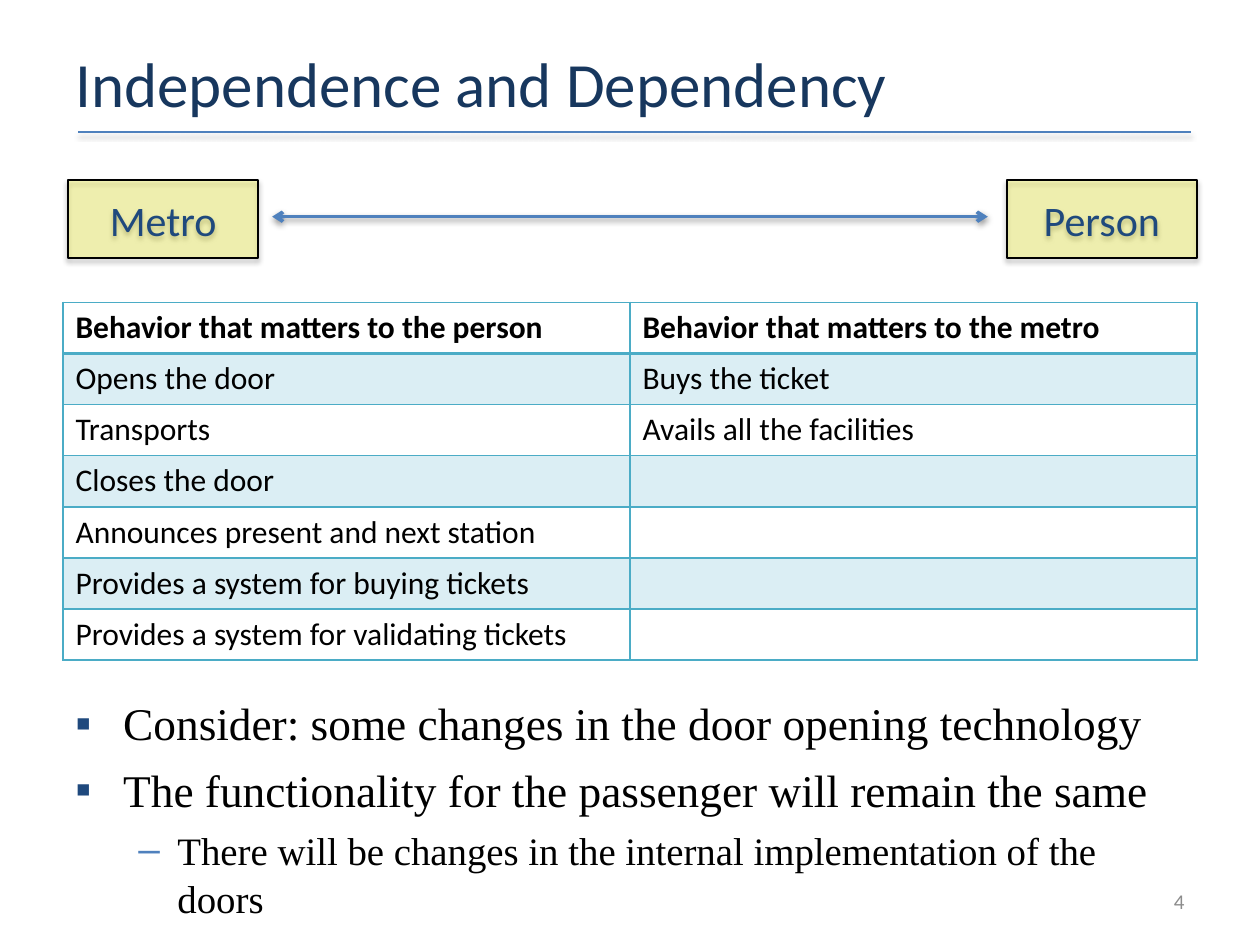
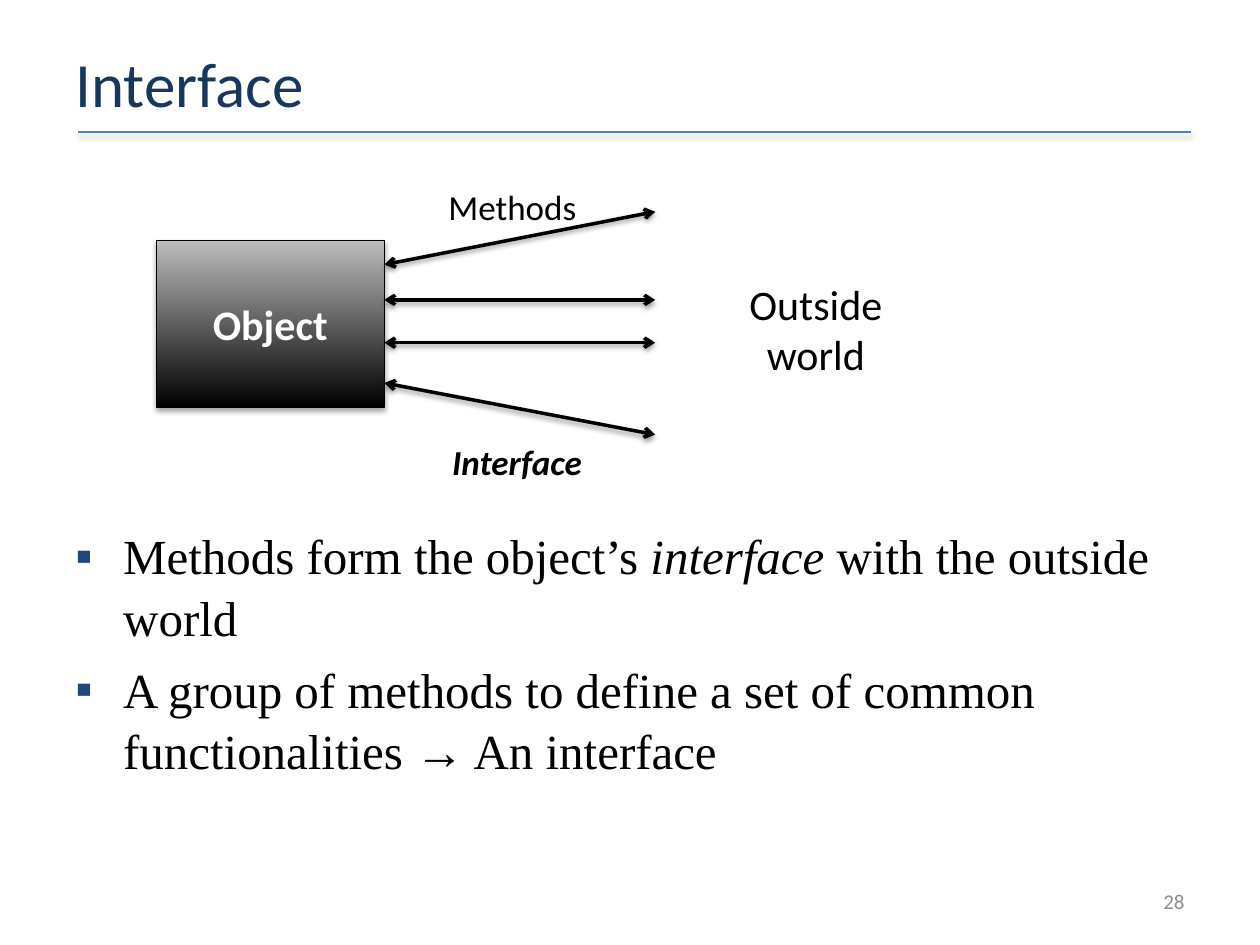
from collections import namedtuple
from dataclasses import dataclass

from lxml.etree import SubElement
from pptx import Presentation
from pptx.dml.color import RGBColor as RGB
from pptx.enum.shapes import MSO_CONNECTOR as Connector, MSO_SHAPE as Preset
from pptx.enum.text import MSO_ANCHOR as Anchor, PP_ALIGN as Align
from pptx.oxml.ns import qn
from pptx.util import Inches, Pt

Box = namedtuple("Box", "left top width height")


@dataclass(frozen=True)
class Theme:
    heading: str = "Calibri"
    serif: str = "Times New Roman"
    title: str = "17375E"
    navy: str = "1F497D"
    blue: str = "4F81BD"
    teal: str = "4BACC6"
    band: str = "DBEEF4"
    yellow: str = "FFFF00"
    silver: str = "BDBDBD"
    grey: str = "8C8C8C"
    black: str = "000000"
    white: str = "FFFFFF"
    title_size: float = 36
    body_size: float = 28
    box_size: float = 24
    label_size: float = 20
    table_size: float = 18
    footer_size: float = 12


THEME = Theme()
BEHAVIORS = [
    ("Behavior that matters to the person", "Behavior that matters to the metro"),
    ("Opens the door", "Buys the ticket"),
    ("Transports", "Avails all the facilities"),
    ("Closes the door", ""),
    ("Announces present and next station", ""),
    ("Provides a system for buying tickets", ""),
    ("Provides a system for validating tickets", ""),
]
# Bullet levels: mark, mark colour, left indent and hanging indent
LEVELS = [("▪", THEME.navy, 0.38, 0.38), ("–", THEME.blue, 0.81, 0.31)]


# Shared helpers
def add_xml(parent, tag, **attributes):
    return SubElement(parent, qn(tag), {k: str(v) for k, v in attributes.items()})


def add_color(parent, color, alpha=None):
    node = add_xml(add_xml(parent, "a:solidFill"), "a:srgbClr", val=color)
    if alpha is not None:
        add_xml(node, "a:alpha", val=alpha * 1000)


def add_shadow(shape, alpha, distance):
    effects = add_xml(shape.element.spPr, "a:effectLst")
    shadow = add_xml(effects, "a:outerShdw", blurRad=Pt(3.1), dist=Pt(distance),
                     dir=90 * 60000, rotWithShape=0)
    add_xml(add_xml(shadow, "a:srgbClr", val=THEME.black), "a:alpha", val=alpha * 1000)


def write(para, text, size, color=THEME.black, name=THEME.heading, **styles):
    span = para.add_run()
    span.text = text
    values = {"size": Pt(size), "name": name, **styles}
    for key, value in values.items():
        setattr(span.font, key, value)
    span.font.color.rgb = RGB.from_string(color)


def inches(box):
    return [Inches(value) for value in box]


def add_text(page, box, text, size, color=THEME.black, align=Align.LEFT,
             anchor=Anchor.TOP, **styles):
    frame = page.shapes.add_textbox(*inches(box)).text_frame
    frame.word_wrap = True
    frame.vertical_anchor = anchor
    frame.paragraphs[0].alignment = align
    write(frame.paragraphs[0], text, size, color, **styles)


def add_line(page, start, end, color, width, arrows=False):
    line = page.shapes.add_connector(Connector.STRAIGHT, *inches(start + end))
    line.line.color.rgb = RGB.from_string(color)
    line.line.width = Pt(width)
    if arrows:
        outline = line.element.spPr.find(qn("a:ln"))
        for tag in ("a:headEnd", "a:tailEnd"):
            add_xml(outline, tag, type="arrow")
    add_shadow(line, 38, 1.6)


def add_block(page, box, text, color, fill, line_width, **styles):
    block = page.shapes.add_shape(Preset.RECTANGLE, *inches(box))
    fill(block.fill)
    block.line.color.rgb = RGB.from_string(THEME.black)
    block.line.width = Pt(line_width)
    frame = block.text_frame
    frame.vertical_anchor = Anchor.MIDDLE
    frame.paragraphs[0].alignment = Align.CENTER
    write(frame.paragraphs[0], text, THEME.box_size, color, **styles)
    add_shadow(block, 35, 1.8)
    return block


# Fills of the two kinds of block
def fill_yellow(fill):
    fill.solid()
    fill.fore_color.rgb = RGB.from_string(THEME.yellow)


def fill_fade(fill):
    fill.gradient()
    fill.gradient_angle = 90
    for stop, color in zip(fill.gradient_stops, (THEME.black, THEME.silver)):
        stop.color.rgb = RGB.from_string(color)


# Title, rule and page number
def add_page(deck, title, number):
    page = deck.slides.add_slide(deck.slide_layouts[6])
    add_line(page, (0.62, 1.05), (9.45, 1.05), THEME.blue, 1)
    add_text(page, Box(0.5, 0.3, 9, 0.71), title, THEME.title_size, THEME.title,
             anchor=Anchor.MIDDLE)
    add_text(page, Box(7.17, 6.95, 2.33, 0.4), str(number), THEME.footer_size,
             THEME.grey, Align.RIGHT, Anchor.MIDDLE)
    return page


# Bulleted text; each item is a level, a size and its (text, italic) spans
def add_bullets(page, box, items):
    frame = page.shapes.add_textbox(*inches(box)).text_frame
    frame.word_wrap = True
    for index, (level, size, spans) in enumerate(items):
        para = frame.add_paragraph() if index else frame.paragraphs[0]
        mark, color, left, hanging = LEVELS[level]
        para.level = level
        para.line_spacing = 1.05
        para.space_before = Pt(round(size * 0.2, 1))
        for text, italic in spans:
            write(para, text, size, name=THEME.serif, italic=italic)
        props = para._p.get_or_add_pPr()
        props.set("marL", str(Inches(left)))
        props.set("indent", str(-Inches(hanging)))
        add_xml(add_xml(props, "a:buClr"), "a:srgbClr", val=color)
        add_xml(props, "a:buFont", typeface="Arial")
        add_xml(props, "a:buChar", char=mark)


# Two parties joined by a double arrow
def add_parties(page, box):
    width, gap = 1.51, 0.15
    right = box.left + box.width
    for left, name in ((box.left, "Metro"), (right - width, "Person")):
        block = add_block(page, Box(left, box.top, width, box.height), name,
                          THEME.navy, fill_yellow, 1)
        tint = block.element.spPr.find(qn("a:solidFill")).find(qn("a:srgbClr"))
        add_xml(tint, "a:alpha", val=25000)
    middle = box.top + 0.29
    add_line(page, (box.left + width + gap - 0.04, middle),
             (right - width - gap, middle), THEME.blue, 2, arrows=True)


# Table of behaviors
def add_behaviors(page, box):
    rows, columns = len(BEHAVIORS), len(BEHAVIORS[0])
    table = page.shapes.add_table(rows, columns, *inches(box)).table
    table.first_row = table.horz_banding = False
    for row in table.rows:
        row.height = Inches(box.height / rows)
    for r, texts in enumerate(BEHAVIORS):
        for c, text in enumerate(texts):
            cell = table.cell(r, c)
            para = cell.text_frame.paragraphs[0]
            para.font.size = Pt(THEME.table_size)
            if text:
                write(para, text, THEME.table_size, bold=r == 0)
            widths = {"a:lnL": 1, "a:lnR": 1, "a:lnT": 2 if r == 1 else 1,
                      "a:lnB": 2 if r == 0 else 1}
            for tag, width in widths.items():
                border = add_xml(cell._tc.get_or_add_tcPr(), tag, w=Pt(width))
                add_color(border, THEME.teal)
            if r % 2:
                cell.fill.solid()
                cell.fill.fore_color.rgb = RGB.from_string(THEME.band)
            else:
                cell.fill.background()


# Object whose methods reach the outside world
def add_object_diagram(page, box):
    left, top = box.left, box.top
    edge, reach = left + 1.81, left + 3.96
    add_block(page, Box(left, top + 0.49, edge - left, 1.32), "Object",
              THEME.white, fill_fade, 0.75, bold=True)
    for start, end in ((0.68, 0.26), (0.96, 0.96), (1.3, 1.3), (1.62, 2.03)):
        add_line(page, (edge, top + start), (reach, top + end), THEME.black, 2,
                 arrows=True)
    add_text(page, Box(left + 2.22, top, 1.39, 0.44), "Methods", THEME.label_size)
    add_text(page, Box(left + 4.54, top + 0.74, 1.39, 0.91), "Outside world",
             THEME.box_size, align=Align.CENTER)
    add_text(page, Box(left + 2.25, top + 2.03, 1.39, 0.44), "Interface",
             THEME.label_size, bold=True, italic=True)


def build_dependency(deck):
    page = add_page(deck, "Independence and Dependency", 4)
    add_behaviors(page, Box(0.5, 2.4, 9, 2.84))
    add_parties(page, Box(0.54, 1.43, 8.96, 0.62))
    add_bullets(page, Box(0.5, 5.45, 9, 1.25), [
        (0, 25.9, [("Consider: some changes in the door opening technology", False)]),
        (0, 25.9, [("The functionality for the passenger will remain the same", False)]),
        (1, 22.2, [("There will be changes in the internal implementation of the doors",
                    False)]),
    ])


def build_interface(deck):
    page = add_page(deck, "Interface", 28)
    add_bullets(page, Box(0.5, 4.1, 9, 2.6), [
        (0, THEME.body_size, [("Methods form the object’s ", False),
                              ("interface ", True),
                              ("with the outside world", False)]),
        (0, THEME.body_size, [("A group of methods to define a set of common "
                               "functionalities → An interface", False)]),
    ])
    add_object_diagram(page, Box(1.24, 1.42, 5.93, 2.47))


def main():
    deck = Presentation()
    deck.slide_width, deck.slide_height = Inches(10), Inches(7.5)
    build_dependency(deck)
    build_interface(deck)
    deck.save("out.pptx")


if __name__ == "__main__":
    main()
